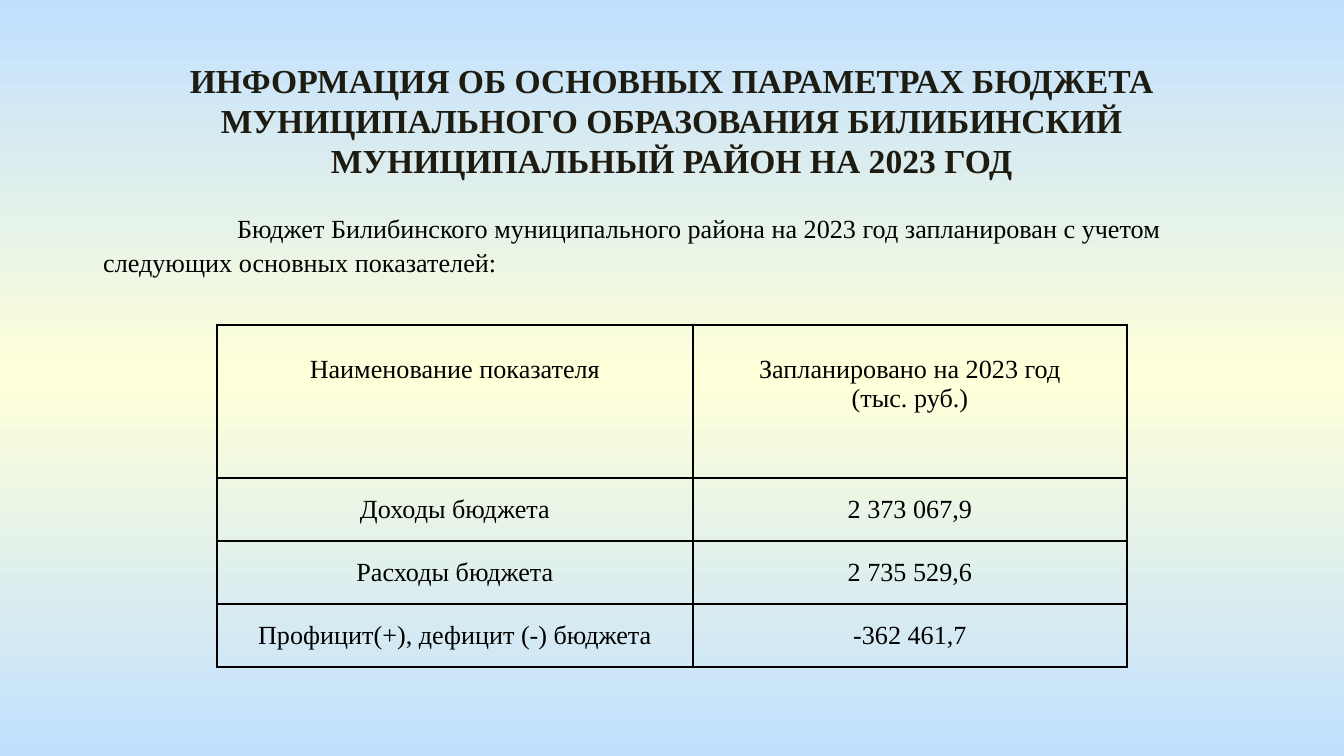
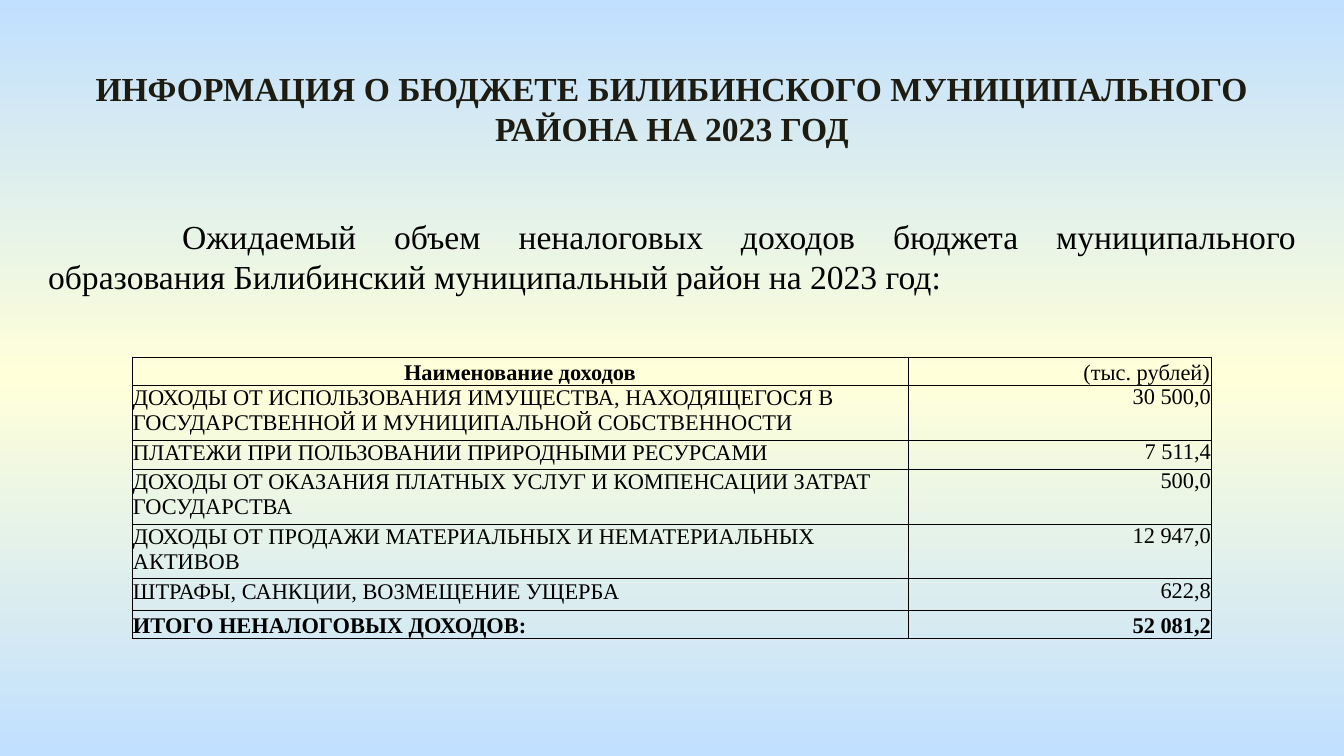
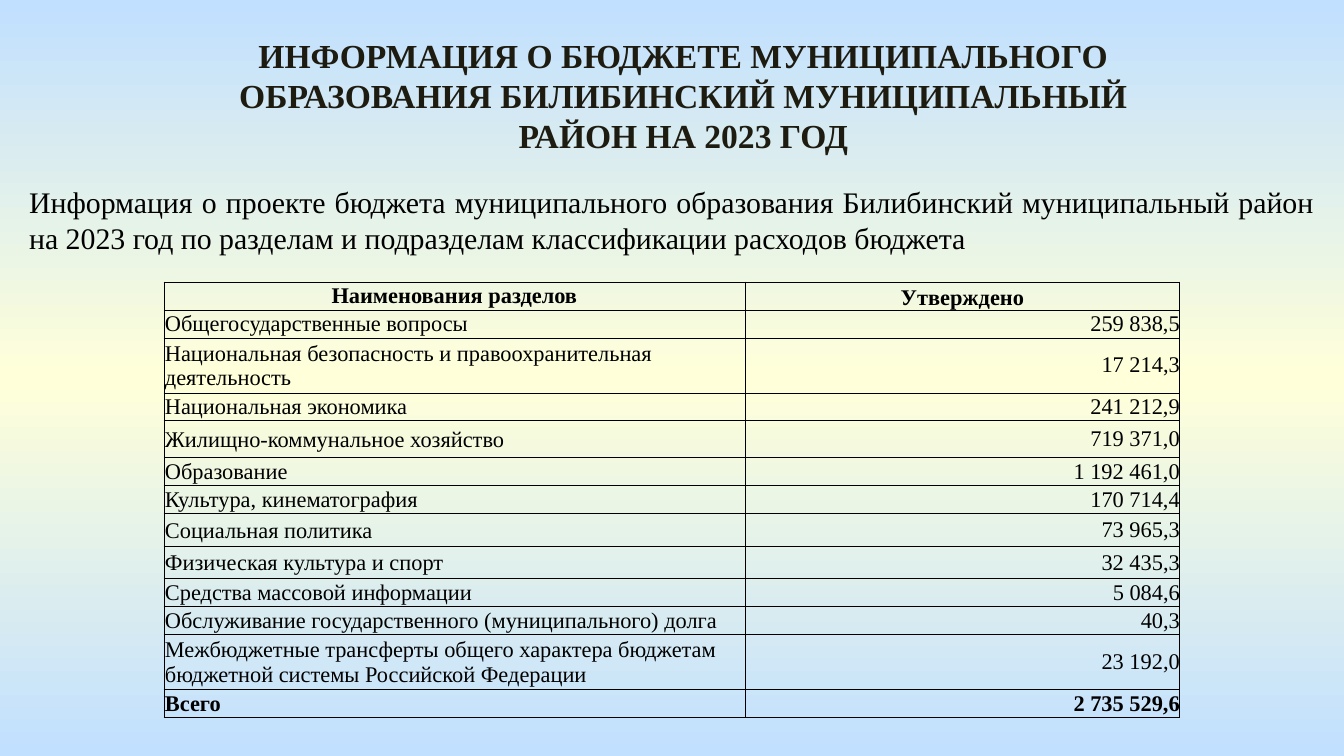
import copy

import pptx
import pptx.dml.color
import pptx.enum.shapes
import pptx.enum.text
import pptx.oxml
import pptx.oxml.ns
import pptx.util

RGBColor = pptx.dml.color.RGBColor
ALIGN = pptx.enum.text.PP_ALIGN
ANCHOR = pptx.enum.text.MSO_ANCHOR
qn = pptx.oxml.ns.qn

EMU_PER_PX = 914400 / 134.4
SLIDE_WIDTH, SLIDE_HEIGHT = 1344, 756
FIRST_LINE_INDENT = 134

SKY = RGBColor(0xC1, 0xE0, 0xFF)
CREAM = RGBColor(0xFF, 0xFF, 0xD9)
TITLE_COLOR = RGBColor(0x1E, 0x1C, 0x11)
BLACK = RGBColor(0, 0, 0)
FONT = "Times New Roman"

BUDGET_ROWS = [
    ("Наименование показателя", "Запланировано на 2023 год\n(тыс. руб.)"),
    ("Доходы бюджета", "2 373 067,9"),
    ("Расходы бюджета", "2 735 529,6"),
    ("Профицит(+), дефицит (-) бюджета", "-362 461,7"),
]
INCOME_ROWS = [
    ("Наименование доходов", "(тыс. рублей)"),
    ("ДОХОДЫ ОТ ИСПОЛЬЗОВАНИЯ ИМУЩЕСТВА, НАХОДЯЩЕГОСЯ В "
     "ГОСУДАРСТВЕННОЙ И МУНИЦИПАЛЬНОЙ СОБСТВЕННОСТИ", "30 500,0"),
    ("ПЛАТЕЖИ ПРИ ПОЛЬЗОВАНИИ ПРИРОДНЫМИ РЕСУРСАМИ", "7 511,4"),
    ("ДОХОДЫ ОТ ОКАЗАНИЯ ПЛАТНЫХ УСЛУГ И КОМПЕНСАЦИИ ЗАТРАТ ГОСУДАРСТВА", "500,0"),
    ("ДОХОДЫ ОТ ПРОДАЖИ МАТЕРИАЛЬНЫХ И НЕМАТЕРИАЛЬНЫХ АКТИВОВ", "12 947,0"),
    ("ШТРАФЫ, САНКЦИИ, ВОЗМЕЩЕНИЕ УЩЕРБА", "622,8"),
    ("ИТОГО НЕНАЛОГОВЫХ ДОХОДОВ:", "52 081,2"),
]
EXPENSE_ROWS = [
    ("Наименования разделов", "Утверждено"),
    ("Общегосударственные вопросы", "259 838,5"),
    ("Национальная безопасность и правоохранительная деятельность", "17 214,3"),
    ("Национальная экономика", "241 212,9"),
    ("Жилищно-коммунальное хозяйство", "719 371,0"),
    ("Образование", "1 192 461,0"),
    ("Культура, кинематография", "170 714,4"),
    ("Социальная политика", "73 965,3"),
    ("Физическая культура и спорт", "32 435,3"),
    ("Средства массовой информации", "5 084,6"),
    ("Обслуживание государственного (муниципального) долга", "40,3"),
    ("Межбюджетные трансферты общего характера бюджетам "
     "бюджетной системы Российской Федерации", "23 192,0"),
    ("Всего", "2 735 529,6"),
]


def px(length):
    return pptx.util.Emu(round(length * EMU_PER_PX))


def write_text(frame, text, size=18, bold=False, color=BLACK,
               align=ALIGN.LEFT, indent=0, spacing=None):
    frame.text = text
    for paragraph in frame.paragraphs:
        paragraph.alignment = align
        if spacing:
            paragraph.line_spacing = spacing
        if indent:
            paragraph._p.get_or_add_pPr().set("indent", str(px(indent)))
        for run in paragraph.runs:
            run.font.name = FONT
            run.font.size = pptx.util.Pt(size)
            run.font.bold = bold
            run.font.color.rgb = color


def add_slide(presentation):
    slide = presentation.slides.add_slide(presentation.slide_layouts[6])
    fill = slide.background.fill
    fill.gradient()
    fill.gradient_angle = 270
    stop_list = next(slide.element.iter(qn("a:gsLst")))
    stop_list.append(copy.deepcopy(stop_list[-1]))
    for stop, color, position in zip(fill.gradient_stops, (SKY, CREAM, SKY), (0, 0.5, 1)):
        stop.color.rgb = color
        stop.position = position
    return slide


def fit_text(shape, text, **text_format):
    frame = shape.text_frame
    frame.word_wrap = True
    frame.vertical_anchor = ANCHOR.TOP
    frame.auto_size = pptx.enum.text.MSO_AUTO_SIZE.SHAPE_TO_FIT_TEXT
    write_text(frame, text, **text_format)


def add_text(slide, bounds, text, **text_format):
    fit_text(slide.shapes.add_textbox(*map(px, bounds)), text, **text_format)


def add_title(slide, bounds, text):
    add_text(slide, bounds, text, bold=True, color=TITLE_COLOR, align=ALIGN.CENTER)


def add_background_panel(slide, bounds, text, top_margin, **text_format):
    rectangle = pptx.enum.shapes.MSO_SHAPE.RECTANGLE
    shape = slide.shapes.add_shape(rectangle, *map(px, bounds))
    shape.element.remove(shape.element.find(qn("p:style")))
    shape.element.set("useBgFill", "1")
    shape.line.fill.background()
    shape.shadow.inherit = False
    shape.text_frame.margin_top = px(top_margin)
    fit_text(shape, text, **text_format)


def set_borders(cell_properties, width):
    for index, side in enumerate(("lnL", "lnR", "lnT", "lnB")):
        border = pptx.oxml.parse_xml(
            f'<a:{side} {pptx.oxml.ns.nsdecls("a")} w="{pptx.util.Pt(width)}">'
            f'<a:solidFill><a:srgbClr val="{BLACK}"/></a:solidFill></a:{side}>')
        cell_properties.insert(index, border)


def add_table(slide, position, widths, heights, rows, border, cell_format):
    bounds = (*position, sum(widths), sum(heights))
    frame = slide.shapes.add_table(len(rows), len(widths), *map(px, bounds))
    table = frame.table
    table.first_row = table.horz_banding = False
    for column, width in zip(table.columns, widths):
        column.width = px(width)
    for row, height in zip(table.rows, heights):
        row.height = px(height)
    for row_index, texts in enumerate(rows):
        for column_index, text in enumerate(texts):
            cell = table.cell(row_index, column_index)
            text_format = cell_format(row_index, column_index)
            side, top = text_format.pop("margins")
            cell.margin_left = cell.margin_right = px(side)
            cell.margin_top, cell.margin_bottom = px(top), 0
            cell.vertical_anchor = text_format.pop("anchor")
            cell.fill.background()
            write_text(cell.text_frame, text, **text_format)
    for cell_properties in frame.element.iter(qn("a:tcPr")):
        set_borders(cell_properties, border)


def budget_cell(row, column):
    header = row == 0
    return dict(size=14, align=ALIGN.CENTER,
                anchor=ANCHOR.TOP if header else ANCHOR.MIDDLE,
                margins=(9, 30 if header else 0))


def list_cell(row, column, last_row):
    header = row == 0
    if column == 1:
        align = ALIGN.RIGHT
    else:
        align = ALIGN.CENTER if header else ALIGN.LEFT
    margin = 1 if header or column == 0 else 0
    return dict(size=12, align=align, bold=row in (0, last_row), margins=(margin, margin))


def income_cell(row, column):
    last_row = len(INCOME_ROWS) - 1
    text_format = list_cell(row, column, last_row)
    text_format["anchor"] = ANCHOR.BOTTOM if row in (0, last_row) else ANCHOR.TOP
    if (row, column) == (0, 1):
        text_format["bold"] = False
    return text_format


def expense_cell(row, column):
    text_format = list_cell(row, column, len(EXPENSE_ROWS) - 1)
    text_format["anchor"] = ANCHOR.MIDDLE
    if (row, column) == (0, 1):
        text_format.update(align=ALIGN.CENTER, anchor=ANCHOR.BOTTOM)
    return text_format


def build_budget_slide(presentation):
    slide = add_slide(presentation)
    add_background_panel(
        slide, (90, 196, 1175, 86),
        "Бюджет Билибинского муниципального района на 2023 год запланирован "
        "с учетом следующих основных показателей:",
        top_margin=13, size=14, indent=FIRST_LINE_INDENT, spacing=1.1)
    add_title(slide, (47, 53, 1250, 136),
              "ИНФОРМАЦИЯ ОБ ОСНОВНЫХ ПАРАМЕТРАХ БЮДЖЕТА МУНИЦИПАЛЬНОГО ОБРАЗОВАНИЯ "
              "БИЛИБИНСКИЙ МУНИЦИПАЛЬНЫЙ РАЙОН НА 2023 ГОД")
    add_table(slide, (217, 325), (476, 434), (153, 63, 63, 63),
              BUDGET_ROWS, 1, budget_cell)


def build_income_slide(presentation):
    slide = add_slide(presentation)
    add_title(slide, (53, 61, 1238, 95),
              "ИНФОРМАЦИЯ О БЮДЖЕТЕ БИЛИБИНСКОГО МУНИЦИПАЛЬНОГО РАЙОНА НА 2023 ГОД")
    add_text(slide, (35, 209, 1275, 95),
             "Ожидаемый объем неналоговых доходов бюджета муниципального образования "
             "Билибинский муниципальный район на 2023 год:",
             align=ALIGN.JUSTIFY, indent=FIRST_LINE_INDENT)
    add_table(slide, (132, 357), (776, 303), (28, 55, 29, 55, 54, 32, 27),
              INCOME_ROWS, 0.5, income_cell)


def build_expense_slide(presentation):
    slide = add_slide(presentation)
    add_title(slide, (164, 28, 1039, 136),
              "ИНФОРМАЦИЯ О БЮДЖЕТЕ МУНИЦИПАЛЬНОГО ОБРАЗОВАНИЯ БИЛИБИНСКИЙ "
              "МУНИЦИПАЛЬНЫЙ РАЙОН НА 2023 ГОД")
    add_text(slide, (16, 177, 1312, 86),
             "Информация о проекте бюджета муниципального образования Билибинский "
             "муниципальный район на 2023 год по разделам и подразделам "
             "классификации расходов бюджета",
             size=16, align=ALIGN.JUSTIFY)
    add_table(slide, (164, 282), (581, 435),
              (28, 28, 55, 28, 37, 28, 28, 33, 32, 28, 28, 55, 28),
              EXPENSE_ROWS, 0.5, expense_cell)


def main():
    presentation = pptx.Presentation()
    presentation.slide_width = px(SLIDE_WIDTH)
    presentation.slide_height = px(SLIDE_HEIGHT)
    build_budget_slide(presentation)
    build_income_slide(presentation)
    build_expense_slide(presentation)
    presentation.save("out.pptx")


if __name__ == "__main__":
    main()
